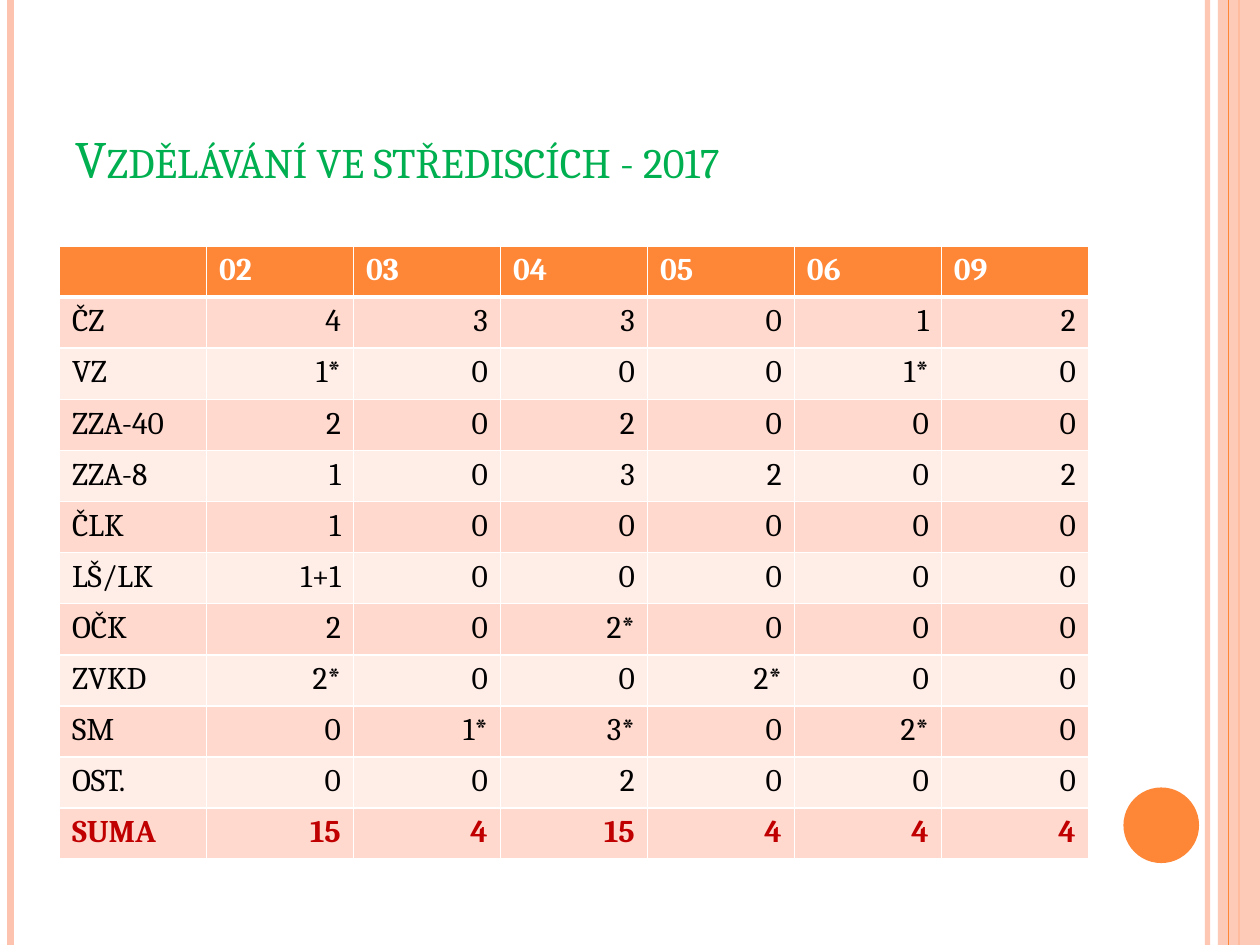
from lxml.etree import SubElement
from pptx import Presentation
from pptx.dml.color import RGBColor
from pptx.enum.shapes import MSO_CONNECTOR, MSO_SHAPE
from pptx.enum.text import MSO_ANCHOR, MSO_AUTO_SIZE, PP_ALIGN
from pptx.oxml.ns import qn
from pptx.util import Pt

SLIDE_WIDTH, SLIDE_HEIGHT = 720, 540
FONT = "Cambria"
ORANGE, PEACH, WHITE = "FE8637", "FEC3AE", "FFFFFF"
BANDS = ["FFD9CE", "FFEDE8"]
GREEN, BLACK, RED = "00B050", "000000", "C00000"

CENTRES = ["", "02", "03", "04", "05", "06", "09"]
COURSES = [
    ["ČZ", "4", "3", "3", "0", "1", "2"],
    ["VZ", "1*", "0", "0", "0", "1*", "0"],
    ["ZZA-40", "2", "0", "2", "0", "0", "0"],
    ["ZZA-8", "1", "0", "3", "2", "0", "2"],
    ["ČLK", "1", "0", "0", "0", "0", "0"],
    ["LŠ/LK", "1+1", "0", "0", "0", "0", "0"],
    ["OČK", "2", "0", "2*", "0", "0", "0"],
    ["ZVKD", "2*", "0", "0", "2*", "0", "0"],
    ["SM", "0", "1*", "3*", "0", "2*", "0"],
    ["OST.", "0", "0", "2", "0", "0", "0"],
]
TOTALS = ["SUMA", "15", "4", "15", "4", "4", "4"]


def rgb(colour):
    return RGBColor.from_string(colour)


def set_alpha(fill_parent, percent):
    colour = next(fill_parent.iter(qn("a:srgbClr")))
    SubElement(colour, qn("a:alpha"), val=str(percent * 1000))


def write(frame, text, size=18, colour=BLACK, bold=False,
          align=PP_ALIGN.LEFT, small_caps=False):
    paragraph = frame.paragraphs[0]
    paragraph.alignment = align
    run = paragraph.add_run()
    run.text = text
    run.font.name = FONT
    run.font.size = Pt(size)
    run.font.bold = bold
    run.font.color.rgb = rgb(colour)
    if small_caps:
        run.font._element.set("cap", "small")


def add_stripe(slide, x, height, colour, weight, opacity=100):
    stripe = slide.shapes.add_connector(
        MSO_CONNECTOR.STRAIGHT, Pt(x), Pt(0), Pt(x), Pt(height))
    stripe.line.color.rgb = rgb(colour)
    stripe.line.width = Pt(weight)
    properties = stripe._element.spPr
    SubElement(properties, qn("a:effectLst"))
    if opacity < 100:
        set_alpha(properties, opacity)


def add_plain_shape(slide, kind, left, top, width, height, colour):
    shape = slide.shapes.add_shape(kind, Pt(left), Pt(top), Pt(width), Pt(height))
    shape.shadow.inherit = False
    shape.fill.solid()
    shape.fill.fore_color.rgb = rgb(colour)
    shape.line.fill.background()
    return shape


def add_decoration(slide, width, height):
    # Stripes along both edges
    add_stripe(slide, width - 30, height, PEACH, 3, opacity=93)
    add_stripe(slide, 6, height, PEACH, 4.5)
    add_stripe(slide, width - 12, height, ORANGE, 1.5)
    # Translucent band with its fine line
    band = add_plain_shape(slide, MSO_SHAPE.RECTANGLE, width - 24, 0, 24, height, PEACH)
    set_alpha(band._element.spPr, 87)
    add_stripe(slide, width - 18, height, ORANGE, 0.75)
    # Disc in the lower corner
    add_plain_shape(slide, MSO_SHAPE.OVAL, width - 78, height - 90, 43.2, 43.2, ORANGE)


def add_title(slide, left, top, width, height):
    title = slide.shapes.title
    title.left, title.top, title.width, title.height = map(
        Pt, (left, top, width, height))
    frame = title.text_frame
    frame.word_wrap = True
    frame.auto_size = MSO_AUTO_SIZE.NONE
    frame.vertical_anchor = MSO_ANCHOR.BOTTOM
    write(frame, "Vzdělávání ve střediscích - 2017", size=30, colour=GREEN,
          small_caps=True)


def set_borders(cell, top=1, bottom=1):
    properties = cell._tc.get_or_add_tcPr()
    for side, weight in (("L", 1), ("R", 1), ("T", top), ("B", bottom)):
        border = SubElement(properties, qn(f"a:ln{side}"), w=str(Pt(weight)))
        paint = SubElement(border, qn("a:solidFill"))
        SubElement(paint, qn("a:srgbClr"), val=WHITE)


def add_training_table(slide, left, top, width, height):
    rows = [CENTRES, *COURSES, TOTALS]
    table = slide.shapes.add_table(
        len(rows), len(CENTRES), Pt(left), Pt(top), Pt(width), Pt(height)).table
    for column in table.columns:
        column.width = Pt(width / len(CENTRES))
    for row in table.rows:
        row.height = Pt(height / len(rows))

    for r, values in enumerate(rows):
        is_header, is_total = values is CENTRES, values is TOTALS
        fill = ORANGE if is_header else BANDS[(r - 1) % 2]
        colour = WHITE if is_header else RED if is_total else BLACK
        for c, value in enumerate(values):
            cell = table.cell(r, c)
            # Thick rule between the header and the body
            set_borders(cell, top=3 if r == 1 else 1, bottom=3 if is_header else 1)
            cell.fill.solid()
            cell.fill.fore_color.rgb = rgb(fill)
            is_number = c > 0 and not is_header
            write(cell.text_frame, value, colour=colour,
                  bold=is_header or is_total,
                  align=PP_ALIGN.RIGHT if is_number else PP_ALIGN.LEFT)


def main():
    presentation = Presentation()
    presentation.slide_width = Pt(SLIDE_WIDTH)
    presentation.slide_height = Pt(SLIDE_HEIGHT)
    slide = presentation.slides.add_slide(presentation.slide_layouts[5])
    add_decoration(slide, SLIDE_WIDTH, SLIDE_HEIGHT)
    add_title(slide, 36, 21.6, 588, 90)
    add_training_table(slide, 34, 140.6, 588, 350.4)
    presentation.save("out.pptx")


if __name__ == "__main__":
    main()
